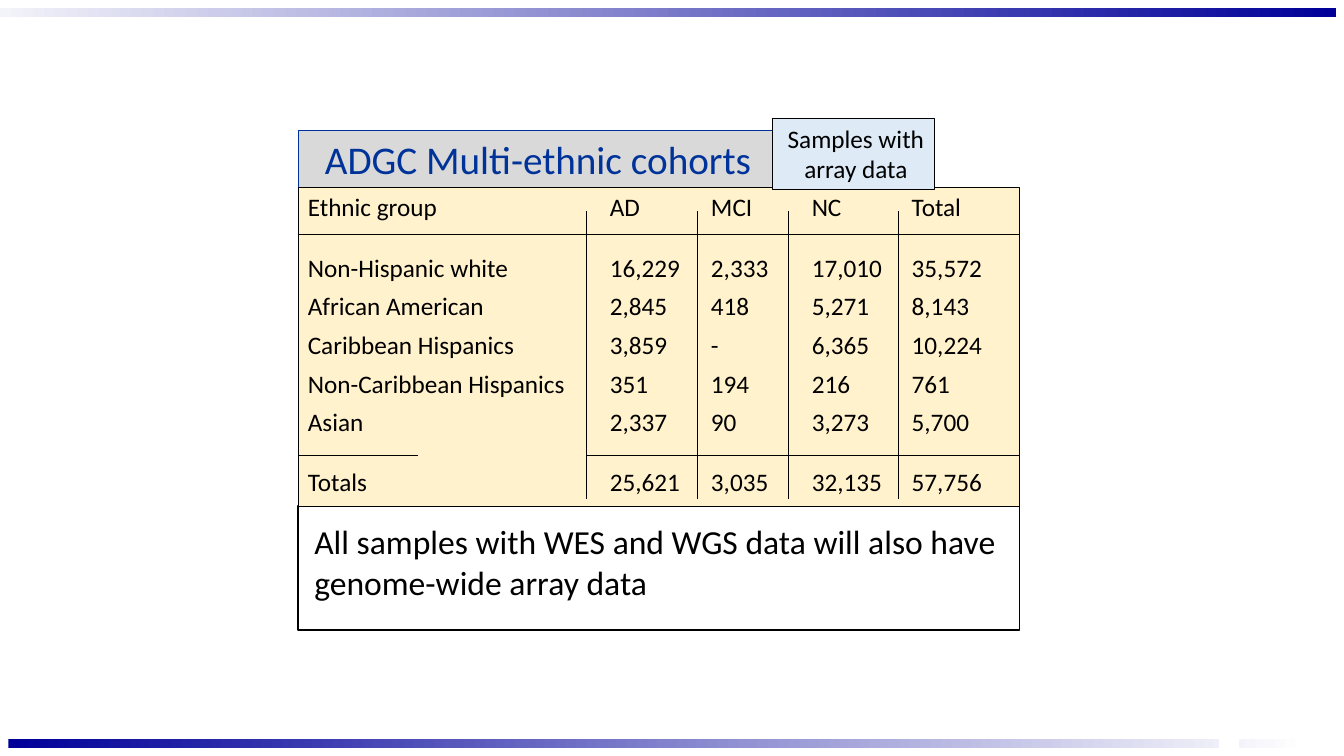
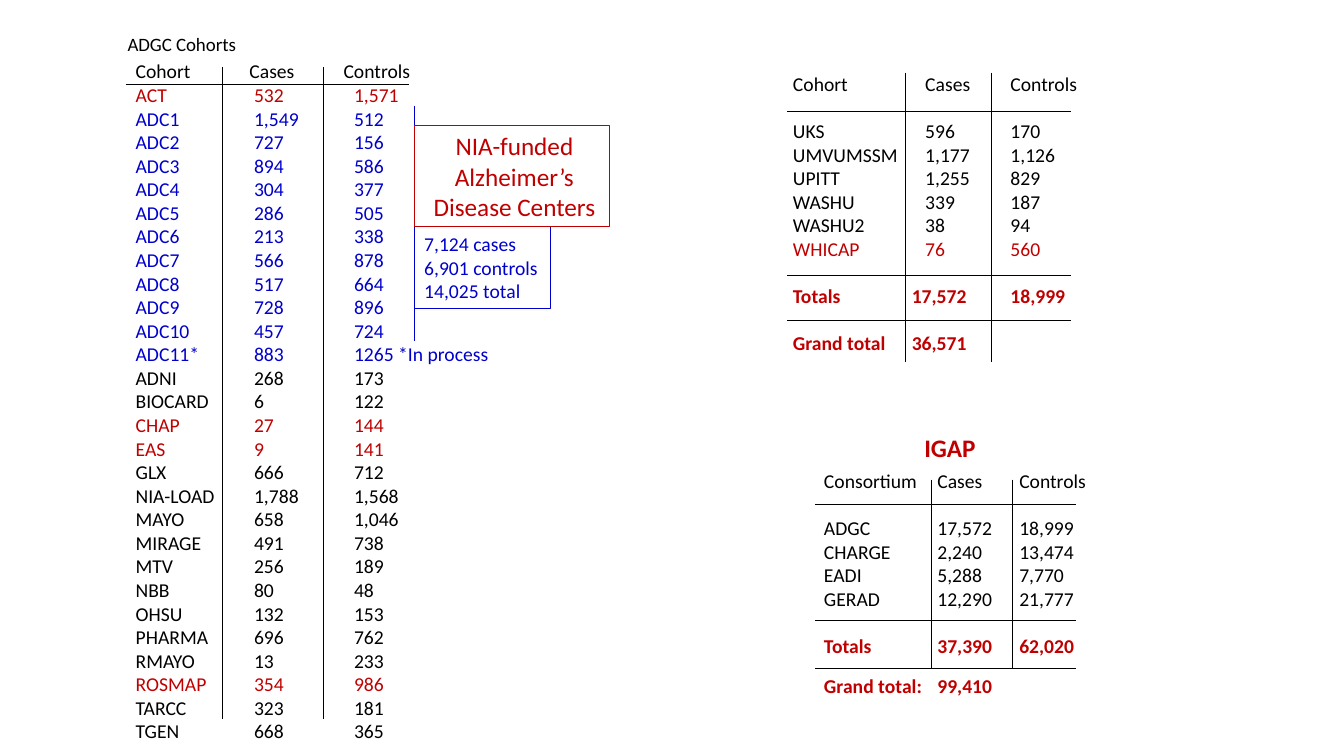
import itertools

import lxml.etree
import pptx
import pptx.dml.color
import pptx.enum.shapes
import pptx.enum.text
import pptx.oxml.ns
import pptx.util

COLORS = {
    "black": "000000",
    "white": "FFFFFF",
    "mist": "F3F3FA",
    "navy": "000099",
    "royal": "003399",
    "blue": "0000CC",
    "red": "C00000",
    "cream": "FFF2CC",
    "sky": "DEEBF7",
    "gray": "D9D9D9",
}
# Row kind -> (text colour, bold)
ROW_STYLES = {
    "head": ("black", False),
    "plain": ("black", False),
    "blue": ("blue", False),
    "red": ("red", False),
    "total": ("red", True),
}
NO_GRID_STYLE = "{2D5ABB26-0587-4C30-8999-92F81FD0307C}"
COLUMNS, ROWS = 160, 90
ALIGN = pptx.enum.text.PP_ALIGN
ANCHOR = pptx.enum.text.MSO_ANCHOR

ETHNIC_GROUPS = [
    ("head", 0.93, ["Ethnic group|AD|MCI|NC|Total"]),
    ("plain", 1.56, [
        "Non-Hispanic white|16,229|2,333|17,010|35,572",
        "African American|2,845|418|5,271|8,143",
        "Caribbean Hispanics|3,859|-|6,365|10,224",
        "Non-Caribbean Hispanics|351|194|216|761",
        "Asian|2,337|90|3,273|5,700",
    ]),
    ("plain", 1.56, ["Totals|25,621|3,035|32,135|57,756"]),
]
COHORTS = [
    ("head", 1, ["Cohort|Cases|Controls"]),
    ("red", 1, ["ACT|532|1,571"]),
    ("blue", 1, [
        "ADC1|1,549|512", "ADC2|727|156", "ADC3|894|586", "ADC4|304|377",
        "ADC5|286|505", "ADC6|213|338", "ADC7|566|878", "ADC8|517|664",
        "ADC9|728|896", "ADC10|457|724", "ADC11*|883|1265 *In process",
    ]),
    ("plain", 1, ["ADNI|268|173", "BIOCARD|6|122"]),
    ("red", 1, ["CHAP|27|144", "EAS|9|141"]),
    ("plain", 1, [
        "GLX|666|712", "NIA-LOAD|1,788|1,568", "MAYO|658|1,046",
        "MIRAGE|491|738", "MTV|256|189", "NBB|80|48", "OHSU|132|153",
        "PHARMA|696|762", "RMAYO|13|233",
    ]),
    ("red", 1, ["ROSMAP|354|986"]),
    ("plain", 1, ["TARCC|323|181", "TGEN|668|365"]),
]
MORE_COHORTS = [
    ("head", 1, ["Cohort|Cases|Controls"]),
    ("plain", 2, [
        "UKS|596|170", "UMVUMSSM|1,177|1,126", "UPITT|1,255|829",
        "WASHU|339|187", "WASHU2|38|94",
    ]),
    ("red", 1, ["WHICAP|76|560"]),
    ("total", 2, ["Totals|17,572|18,999"]),
    ("total", 2, ["Grand total|36,571|"]),
]
CONSORTIA = [
    ("head", 1, ["Consortium|Cases|Controls"]),
    ("plain", 2, [
        "ADGC|17,572|18,999", "CHARGE|2,240|13,474",
        "EADI|5,288|7,770", "GERAD|12,290|21,777",
    ]),
    ("total", 2, ["Totals|37,390|62,020"]),
    ("total", 1.7, ["Grand total:|99,410|"]),
]


def rgb(name):
    return pptx.dml.color.RGBColor.from_string(COLORS[name])


class Deck:
    """Draws on the current slide; lengths are columns and rows of the grid."""

    font = "Calibri"

    def __init__(self):
        self.prs = pptx.Presentation()
        self.prs.slide_width = pptx.util.Inches(13.33)
        self.prs.slide_height = pptx.util.Inches(7.5)
        self.slide = None

    def add_slide(self):
        self.slide = self.prs.slides.add_slide(self.prs.slide_layouts[1])

    def x(self, columns):
        return round(self.prs.slide_width * columns / COLUMNS)

    def y(self, rows):
        return round(self.prs.slide_height * rows / ROWS)

    def box(self, left, top, width, height):
        return self.x(left), self.y(top), self.x(width), self.y(height)

    def paint(self, shape, fill=None, line=None, weight=0.75):
        if fill:
            shape.fill.solid()
            shape.fill.fore_color.rgb = rgb(fill)
        else:
            shape.fill.background()
        if line:
            shape.line.color.rgb = rgb(line)
            shape.line.width = pptx.util.Pt(weight)
        else:
            shape.line.fill.background()

    def style(self, paragraph, size, color, bold=False, align=ALIGN.LEFT):
        paragraph.alignment = align
        font = paragraph.font
        font.name, font.size, font.bold = self.font, pptx.util.Pt(size), bold
        font.color.rgb = rgb(color)

    def set_text(self, shape, text, size, color, bold=False, align=ALIGN.LEFT,
                 anchor=ANCHOR.MIDDLE, inset=(0.1, 0.05)):
        frame = shape.text_frame
        frame.text = text
        frame.word_wrap = True
        frame.auto_size = pptx.enum.text.MSO_AUTO_SIZE.NONE
        frame.vertical_anchor = anchor
        frame.margin_left, frame.margin_top = map(pptx.util.Inches, inset)
        frame.margin_right = frame.margin_bottom = pptx.util.Inches(0.05)
        for paragraph in frame.paragraphs:
            self.style(paragraph, size, color, bold, align)

    def place(self, shape, box):
        shape.left, shape.top, shape.width, shape.height = self.box(*box)

    def title(self, text, box, size, color, fill=None, line=None):
        title = self.slide.shapes.title
        self.place(title, box)
        self.paint(title, fill, line)
        self.set_text(title, text, size, color, align=ALIGN.CENTER)

    def body(self, text, box, size, color, line, weight, **layout):
        """Fill the body placeholder with unbulleted lines in a frame."""
        body = self.slide.placeholders[1]
        self.place(body, box)
        self.paint(body, None, line, weight)
        self.set_text(body, text, size, color, **layout)
        for paragraph in body.text_frame.paragraphs:
            paragraph.space_before = pptx.util.Pt(0)
            props = paragraph._p.get_or_add_pPr()
            props.set("marL", "0")
            props.set("indent", "0")
            bullet = lxml.etree.Element(pptx.oxml.ns.qn("a:buNone"))
            props.find(pptx.oxml.ns.qn("a:defRPr")).addprevious(bullet)

    def panel(self, box, fill=None, line=None):
        panel = self.slide.shapes.add_shape(
            pptx.enum.shapes.MSO_SHAPE.RECTANGLE, *self.box(*box))
        panel.shadow.inherit = False
        self.paint(panel, fill, line)
        return panel

    def band(self, box, start, end):
        """Draw a bar that fades from left to right."""
        band = self.panel(box)
        band.fill.gradient()
        band.fill.gradient_angle = 0
        for stop, color, position in zip(
                band.fill.gradient_stops, (start, end), (0, 1)):
            stop.color.rgb = rgb(color)
            stop.position = position

    def label(self, text, box, size, color, bold=False):
        label = self.slide.shapes.add_textbox(*self.box(*box))
        self.set_text(label, text, size, color, bold)

    def rule(self, x1, y1, x2, y2, color="black"):
        rule = self.slide.shapes.add_connector(
            pptx.enum.shapes.MSO_CONNECTOR.STRAIGHT,
            self.x(x1), self.y(y1), self.x(x2), self.y(y2))
        rule.line.color.rgb = rgb(color)
        rule.line.width = pptx.util.Pt(0.5)
        lxml.etree.SubElement(
            rule._element.spPr, pptx.oxml.ns.qn("a:effectLst"))

    def rules(self, across, x_span, down, y_span):
        """Draw horizontal rules at rows across, vertical at columns down."""
        for row in across:
            self.rule(x_span[0], row, x_span[1], row)
        for column in down:
            self.rule(column, y_span[0], column, y_span[1])

    def table(self, blocks, text_starts, end, top, size, pitch,
              pad=1.7, offsets=None):
        """Set blocks of (kind, lead, rows); lead is the first row's height
        in pitches, offsets shift the text of a kind of row per column."""
        rows = [(kind, 1 if index else lead, line.split("|"))
                for kind, lead, lines in blocks
                for index, line in enumerate(lines)]
        edges = [start - pad for start in text_starts] + [end]
        height = pitch * sum(lead for _, lead, _ in rows)
        table = self.slide.shapes.add_table(
            len(rows), len(text_starts),
            *self.box(edges[0], top, end - edges[0], height)).table
        table.first_row = table.horz_banding = False
        table._tbl.tblPr.find(
            pptx.oxml.ns.qn("a:tableStyleId")).text = NO_GRID_STYLE
        for column, (left, right) in zip(
                table.columns, itertools.pairwise(edges)):
            column.width = self.x(right - left)
        for row, (kind, lead, texts) in zip(table.rows, rows):
            row.height = self.y(lead * pitch)
            shifts = (offsets or {}).get(kind, [0] * len(texts))
            for cell, text, shift in zip(row.cells, texts, shifts):
                cell.text = text
                cell.fill.background()
                cell.vertical_anchor = ANCHOR.BOTTOM
                cell.margin_left = self.x(pad + shift)
                cell.margin_right = cell.margin_top = cell.margin_bottom = 0
                paragraph = cell.text_frame.paragraphs[0]
                paragraph.line_spacing = pptx.util.Pt(size * 1.2)
                self.style(paragraph, size, *ROW_STYLES[kind])

    def save(self):
        self.prs.save("out.pptx")


def multi_ethnic_slide(deck):
    left, right, width = 35.5, 121.4, 85.9
    deck.add_slide()
    deck.band((0, 1, 159.1, 1), "mist", "navy")
    deck.band((1, 88, 154.4, 1), "navy", "white")
    deck.panel((145.1, 87.8, 2.4, 1.4), "white")
    deck.panel((left, 22.35, width, 37.9), "cream", "black")
    deck.table(ETHNIC_GROUPS, [36.65, 72.6, 84.65, 96.65, 108.55], right,
               top=22.35, size=18, pitch=4.6)
    deck.rules([27.95], (left, right), [69.85, 83.05, 93.85, 106.95],
               (25.1, 59.4))
    for start, end in ((left, 49.8), (69.85, right)):
        deck.rule(start, 54.2, end, 54.2)
    deck.title("ADGC Multi-ethnic cohorts", (left, 15.5, 56.5, 6.85), 28,
               "royal", "gray", "royal")
    badge = deck.panel((92, 14.05, 19.2, 8.5), "sky", "black")
    deck.set_text(badge, "Samples with array data", 18, "black",
                  align=ALIGN.CENTER)
    deck.body("All samples with WES and WGS data will also have "
              "genome-wide array data", (left, 60.25, width, 14.75), 24,
              "black", "black", 1, anchor=ANCHOR.TOP, inset=(0.16, 0.15))


def cohorts_slide(deck):
    deck.add_slide()
    deck.title("ADGC Cohorts", (11.65, 3.25, 19.4, 4), 13.5, "black")

    deck.table(COHORTS, [16.15, 30.25, 42.15], 60, top=7.2, size=14,
               pitch=2.8, offsets={"head": (0, -0.55, -1.25)})
    deck.rules([10], (15, 48.7), [26.5, 38.5], (8, 85.6))
    deck.rule(49.3, 12.6, 49.3, 40.55, "blue")
    centers = deck.panel((49.3, 14.9, 23.3, 12.1), line="red")
    deck.set_text(centers, "NIA-funded Alzheimer’s Disease Centers", 18,
                  "red", align=ALIGN.CENTER)
    deck.body("7,124 cases\n6,901 controls\n14,025 total",
              (49.3, 27, 16.2, 9.7), 14, "blue", "blue", 0.75)

    deck.table(MORE_COHORTS, [94.4, 110.15, 120.3], 131, top=8.7, size=14,
               pitch=2.8, offsets={"total": (0, -1.6, 0)})
    deck.rules([13.2, 32.75, 38.15], (93.7, 127.55), [107.75, 118],
               (8.65, 43.1))

    deck.label("IGAP", (108.85, 50.9, 15.2, 4.8), 18, "red", bold=True)
    deck.table(CONSORTIA, [98.1, 111.6, 121.35], 131, top=56, size=14,
               pitch=2.8, pad=0.6)
    deck.rules([60, 73.9, 79.55], (97, 128.1), [110.9, 120.5], (57.1, 79.55))


def main():
    deck = Deck()
    multi_ethnic_slide(deck)
    cohorts_slide(deck)
    deck.save()


if __name__ == "__main__":
    main()
